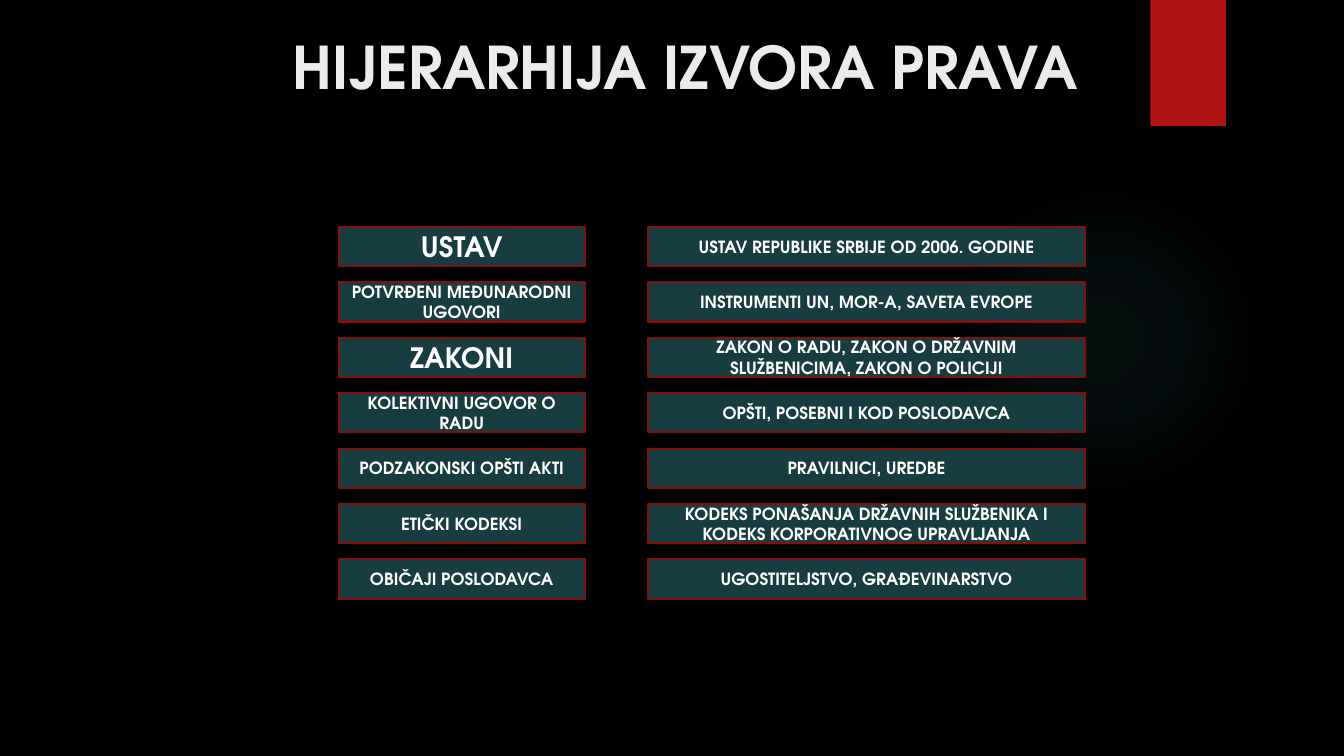
from dataclasses import dataclass

from lxml import etree
from pptx import Presentation
from pptx.dml.color import RGBColor
from pptx.enum import shapes, text
from pptx.oxml import ns
from pptx.util import Inches, Pt


@dataclass(frozen=True)
class Theme:
    font: str = "TeX Gyre Adventor"
    background: str = "000000"
    glow: str = "50B9C1"
    ribbon: str = "B01513"
    box_fill: str = "173D40"
    box_line: str = "82100E"
    title_text: str = "EBEBEB"
    box_text: str = "FFFFFF"
    title_size: int = 42
    major_size: int = 20
    body_size: int = 12


THEME = Theme()

# Source of law, its examples, and the type size of the source
HIERARCHY = [
    ("USTAV", "USTAV REPUBLIKE SRBIJE OD 2006. GODINE", THEME.major_size),
    ("POTVRĐENI MEĐUNARODNI UGOVORI", "INSTRUMENTI UN, MOR-A, SAVETA EVROPE",
     THEME.body_size),
    ("ZAKONI", "ZAKON O RADU, ZAKON O DRŽAVNIM SLUŽBENICIMA, ZAKON O POLICIJI",
     THEME.major_size),
    ("KOLEKTIVNI UGOVOR O RADU", "OPŠTI, POSEBNI I KOD POSLODAVCA",
     THEME.body_size),
    ("PODZAKONSKI OPŠTI AKTI", "PRAVILNICI, UREDBE", THEME.body_size),
    ("ETIČKI KODEKSI",
     "KODEKS PONAŠANJA DRŽAVNIH SLUŽBENIKA I KODEKS KORPORATIVNOG UPRAVLJANJA",
     THEME.body_size),
    ("OBIČAJI POSLODAVCA", "UGOSTITELJSTVO, GRAĐEVINARSTVO", THEME.body_size),
]
FIRST_TOP, ROW_STEP, BOX_HEIGHT = 2.25, 0.55, 0.39
SOURCE_LEFT, SOURCE_WIDTH = 3.36, 2.44
EXAMPLE_LEFT, EXAMPLE_WIDTH = 6.43, 4.33


def rgb(value):
    return RGBColor.from_string(value)


def add_plain_shape(slide, kind, left, top, width, height):
    shape = slide.shapes.add_shape(
        kind, Inches(left), Inches(top), Inches(width), Inches(height))
    shape.shadow.inherit = False
    shape.line.fill.background()
    return shape


def write_centred(frame, wording, size, color):
    frame.word_wrap = True
    paragraph = frame.paragraphs[0]
    paragraph.alignment = text.PP_ALIGN.CENTER
    run = paragraph.add_run()
    run.text = wording
    run.font.name = THEME.font
    run.font.size = Pt(size)
    run.font.bold = True
    run.font.color.rgb = rgb(color)


def add_glow(slide):
    glow = add_plain_shape(slide, shapes.MSO_SHAPE.OVAL, 9.41, 1.83, 3.08, 3.08)
    # Radial gradient that fades to fully transparent
    stops = "".join(
        f'<a:gs pos="{position * 1000}"><a:srgbClr val="{THEME.glow}">'
        f'<a:alpha val="{alpha * 1000}"/></a:srgbClr></a:gs>'
        for position, alpha in ((0, 7), (36, 6), (69, 0), (100, 0)))
    gradient = etree.fromstring(
        f'<a:gradFill {ns.nsdecls("a")}><a:gsLst>{stops}</a:gsLst>'
        '<a:path path="circle"><a:fillToRect l="50000" t="50000" '
        'r="50000" b="50000"/></a:path></a:gradFill>')
    outline = glow.element.spPr.find(ns.qn("a:prstGeom"))
    outline.addnext(gradient)


def add_ribbon(slide):
    ribbon = add_plain_shape(
        slide, shapes.MSO_SHAPE.RECTANGLE, 11.41, 0, 0.75, 1.25)
    ribbon.fill.solid()
    ribbon.fill.fore_color.rgb = rgb(THEME.ribbon)


def add_title(slide, wording):
    title = slide.shapes.title
    title.left, title.top = Inches(2.34), Inches(0.25)
    title.width, title.height = Inches(8.92), Inches(1.08)
    title.text_frame.vertical_anchor = text.MSO_ANCHOR.TOP
    write_centred(title.text_frame, wording, THEME.title_size, THEME.title_text)


def add_box(slide, left, top, width, wording, size):
    box = add_plain_shape(
        slide, shapes.MSO_SHAPE.RECTANGLE, left, top, width, BOX_HEIGHT)
    box.fill.solid()
    box.fill.fore_color.rgb = rgb(THEME.box_fill)
    box.line.color.rgb = rgb(THEME.box_line)
    box.line.width = Pt(1.5)
    box.text_frame.vertical_anchor = text.MSO_ANCHOR.MIDDLE
    write_centred(box.text_frame, wording, size, THEME.box_text)


def main():
    deck = Presentation()
    deck.slide_width, deck.slide_height = Inches(13.33), Inches(7.5)
    slide = deck.slides.add_slide(deck.slide_layouts[5])
    slide.background.fill.solid()
    slide.background.fill.fore_color.rgb = rgb(THEME.background)

    # Backdrop and heading
    add_glow(slide)
    add_ribbon(slide)
    add_title(slide, "HIJERARHIJA IZVORA PRAVA")

    # One row for each level of the hierarchy
    for level, (source, examples, source_size) in enumerate(HIERARCHY):
        top = FIRST_TOP + level * ROW_STEP
        add_box(slide, SOURCE_LEFT, top, SOURCE_WIDTH, source, source_size)
        add_box(slide, EXAMPLE_LEFT, top, EXAMPLE_WIDTH, examples,
                THEME.body_size)

    deck.save("out.pptx")


if __name__ == "__main__":
    main()
